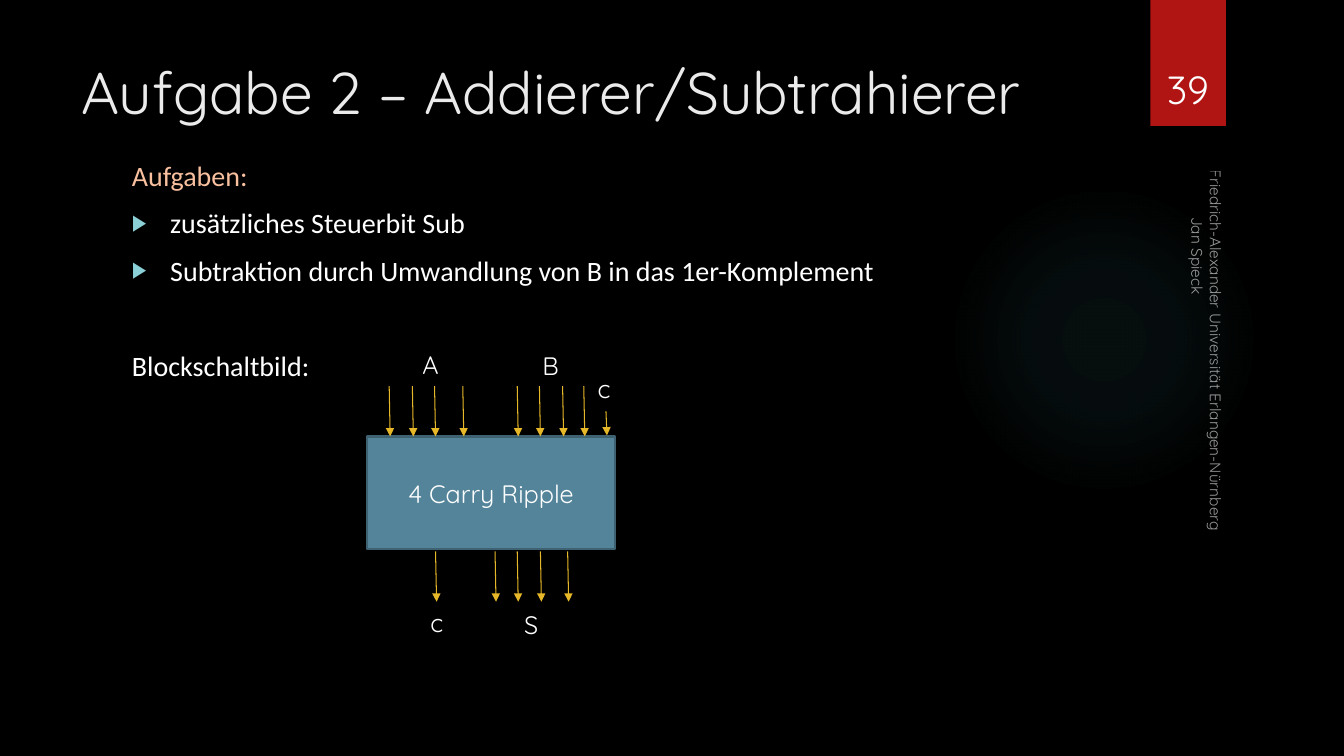
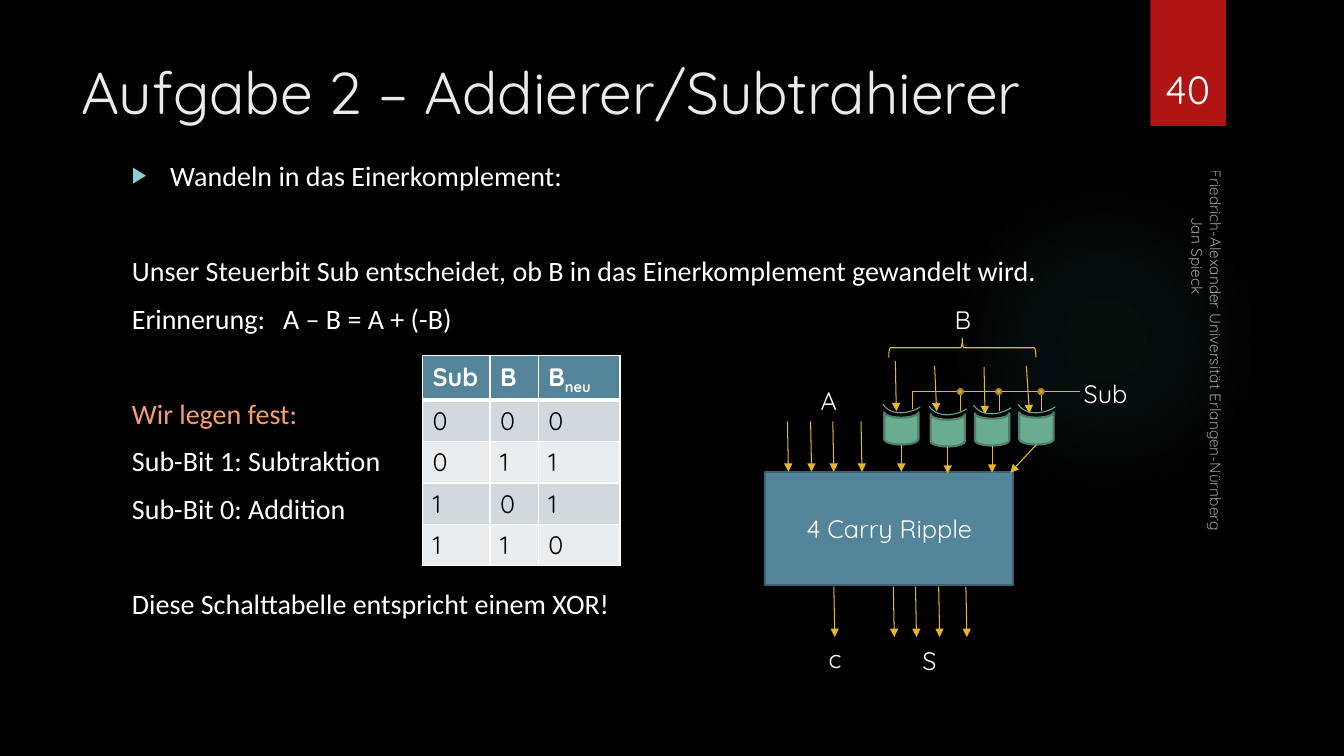
import pptx
import pptx.util
import pptx.dml.color
import pptx.enum.shapes
import pptx.enum.text
import pptx.oxml
import pptx.oxml.ns
from lxml import etree

Inches = pptx.util.Inches
Pt = pptx.util.Pt
SHAPE = pptx.enum.shapes.MSO_SHAPE
ALIGN = pptx.enum.text.PP_ALIGN
ANCHOR = pptx.enum.text.MSO_ANCHOR
qn = pptx.oxml.ns.qn

COLORS = {
    "background": "000000",
    "glow": "50B9C1",
    "band": "B01513",
    "title": "EBEBEB",
    "text": "FFFFFF",
    "bullet": "8AD0D6",
    "task": "F8C09F",
    "rule": "F4A16F",
    "block": "54849A",
    "block_edge": "3E6272",
    "wire": "E6B729",
    "dot_edge": "AA871E",
    "gate": "6AAC90",
    "gate_edge": "4E7F6B",
    "row_odd": "D1D9DE",
    "row_even": "E9EDEF",
    "cell_text": "000000",
}
HEADING_FONT = "Quicksand"
BODY_FONT = "Calibri"
TITLE = "Aufgabe 2 – Addierer/Subtrahierer"
FOOTER = "Friedrich-Alexander Universität Erlangen-Nürnberg\nJan Spieck"


def rgb(name):
    return pptx.dml.color.RGBColor.from_string(COLORS[name])


def add_xml(parent, tag, **attrs):
    return etree.SubElement(parent, qn(tag), attrs)


def style(p, size, color="text", font=HEADING_FONT, bold=False):
    for r in p.runs:
        r.font.size = Pt(size)
        r.font.name = font
        r.font.bold = bold
        r.font.color.rgb = rgb(color)


def add_text(s, text, box, size, color="text", align=ALIGN.LEFT,
             anchor=ANCHOR.TOP, wrap=True):
    sp = s.shapes.add_textbox(*map(Inches, box))
    tf = sp.text_frame
    tf.word_wrap = wrap
    tf.vertical_anchor = anchor
    tf.text = text
    for p in tf.paragraphs:
        p.alignment = align
        style(p, size, color)
    return sp


def add_label(s, text, x, y, width):
    sp = add_text(s, text, (x, y, width, 0.4), 18, wrap=False)
    sp.text_frame.auto_size = pptx.enum.text.MSO_AUTO_SIZE.SHAPE_TO_FIT_TEXT


def add_shape(s, kind, box, fill=None, edge=None, width=1.5, rotation=0):
    sp = s.shapes.add_shape(kind, *map(Inches, box))
    sp.shadow.inherit = False
    sp.rotation = rotation
    if fill:
        sp.fill.solid()
        sp.fill.fore_color.rgb = rgb(fill)
    else:
        sp.fill.background()
    if edge:
        sp.line.color.rgb = rgb(edge)
        sp.line.width = Pt(width)
    else:
        sp.line.fill.background()
    return sp


def add_wire(s, x1, y1, x2, y2, arrow=False):
    c = s.shapes.add_connector(pptx.enum.shapes.MSO_CONNECTOR.STRAIGHT,
                               *map(Inches, (x1, y1, x2, y2)))
    c.line.color.rgb = rgb("wire")
    c.line.width = Pt(0.75)
    if arrow:
        add_xml(c.line._get_or_add_ln(), "a:tailEnd", type="triangle")
    add_xml(c._element.spPr, "a:effectLst")


def add_arrows(s, xs, y):
    for x in xs:
        add_wire(s, x, y, x + 0.01, y + 0.5, arrow=True)


def add_glow(s):
    sp = add_shape(s, SHAPE.OVAL, (9.41, 1.83, 3.08, 3.08))
    stops = "".join(
        f'<a:gs pos="{pos * 1000}"><a:srgbClr val="{COLORS["glow"]}">'
        f'<a:alpha val="{alpha * 1000}"/></a:srgbClr></a:gs>'
        for pos, alpha in ((0, 7), (36, 6), (69, 0)))
    grad = pptx.oxml.parse_xml(
        f'<a:gradFill {pptx.oxml.ns.nsdecls("a")}><a:gsLst>{stops}</a:gsLst>'
        '<a:path path="circle"><a:fillToRect l="50000" t="50000" r="50000" '
        'b="50000"/></a:path></a:gradFill>')
    spPr = sp._element.spPr
    spPr.replace(spPr.find(qn("a:noFill")), grad)


def add_footer(s):
    sp = add_text(s, FOOTER, (9.79, 3.53, 4.22, 0.33), 11, anchor=ANCHOR.BOTTOM)
    sp.rotation = 90
    for p in sp.text_frame.paragraphs:
        for color in p._p.iter(qn("a:srgbClr")):
            add_xml(color, "a:alpha", val="60000")
    p._p.get_or_add_pPr().set("marL", str(Inches(0.47)))


def new_slide(prs, number):
    s = prs.slides.add_slide(prs.slide_layouts[6])
    add_glow(s)
    add_shape(s, SHAPE.RECTANGLE, (11.41, 0, 0.75, 1.25), "band")
    add_text(s, TITLE, (0.71, 0.5, 10.29, 1.53), 42, "title")
    add_footer(s)
    add_text(s, str(number), (11.32, 0.32, 0.92, 0.84), 28,
             align=ALIGN.CENTER, anchor=ANCHOR.BOTTOM)
    return s


def make_bullet(p):
    pPr = p._p.get_or_add_pPr()
    pPr.set("marL", str(Inches(0.38)))
    pPr.set("indent", str(-Inches(0.38)))
    add_xml(add_xml(pPr, "a:buClr"), "a:srgbClr", val=COLORS["bullet"])
    add_xml(pPr, "a:buSzPct", val="80000")
    add_xml(pPr, "a:buFont", typeface="Arial")
    add_xml(pPr, "a:buChar", char="▶")


def add_body(s, lines):
    sp = s.shapes.add_textbox(*map(Inches, (1.21, 1.52, 9.78, 5.62)))
    tf = sp.text_frame
    tf.word_wrap = True
    tf.text = "\n".join(text for text, _, _, _ in lines)
    for i, (p, (text, color, bullet, gap)) in enumerate(zip(tf.paragraphs, lines)):
        if i:
            p.space_before = Pt(44 if gap else 10)
        if bullet:
            make_bullet(p)
        if "\t" in text:
            tabs = add_xml(p._p.get_or_add_pPr(), "a:tabLst")
            add_xml(tabs, "a:tab", pos=str(Inches(1.5)), algn="l")
        style(p, 20, color, BODY_FONT)


def line(text, color="text", bullet=False, gap=False):
    return text, color, bullet, gap


def add_adder(s, x, y):
    sp = add_shape(s, SHAPE.RECTANGLE, (x, y, 2.46, 1.12), "block", "block_edge")
    tf = sp.text_frame
    tf.text = "4 Carry Ripple"
    tf.vertical_anchor = ANCHOR.MIDDLE
    tf.paragraphs[0].alignment = ALIGN.CENTER
    style(tf.paragraphs[0], 18)
    add_arrows(s, [x + dx for dx in (0.22, 0.45, 0.67, 0.95)], y - 0.5)
    add_arrows(s, [x + dx for dx in (0.68, 1.27, 1.49, 1.72, 1.99)], y + 1.14)
    add_label(s, "A", x + 0.45, y - 0.91, 0.39)
    add_label(s, "S", x + 1.46, y + 1.67, 0.33)
    add_label(s, "c", x + 0.53, y + 1.65, 0.36)


def set_borders(cell, top, bottom):
    tcPr = cell._tc.get_or_add_tcPr()
    for side, width in (("L", 1), ("R", 1), ("T", top), ("B", bottom)):
        ln = add_xml(tcPr, f"a:ln{side}", w=str(Pt(width)))
        add_xml(add_xml(ln, "a:solidFill"), "a:srgbClr", val=COLORS["text"])


def add_truth_table(s):
    rows = ["Sub", "B", "B"], "000", "011", "101", "110"
    widths = 0.67, 0.48, 0.81
    table = s.shapes.add_table(len(rows), len(widths),
                               *map(Inches, (4.19, 3.53, 1.96, 2.03))).table
    for column, width in zip(table.columns, widths):
        column.width = Inches(width)
    for i, row in enumerate(rows):
        table.rows[i].height = Inches(0.41)
        for j, value in enumerate(row):
            cell = table.cell(i, j)
            set_borders(cell, 3 if i == 1 else 1, 1 if i else 3)
            cell.fill.solid()
            fill = ("row_odd" if i % 2 else "row_even") if i else "block"
            cell.fill.fore_color.rgb = rgb(fill)
            cell.text_frame.text = value
            style(cell.text_frame.paragraphs[0], 18,
                  "cell_text" if i else "text", bold=not i)
    p = table.cell(0, 2).text_frame.paragraphs[0]
    r = p.add_run()
    r.text = "neu"
    style(p, 18, bold=True)
    r._r.get_or_add_rPr().set("baseline", "-25000")


def add_xor_gates(s):
    gates = (8.78, 4.08), (9.24, 4.1), (9.68, 4.09), (10.12, 4.08)
    inputs = ((8.88, 3.58, 8.89, 4.08), (9.27, 3.63, 9.29, 4.08),
              (9.76, 3.64, 9.77, 4.11), (10.18, 3.63, 10.21, 4.1))
    for ends in inputs:
        add_wire(s, *ends, arrow=True)
    for x, y in gates:
        add_shape(s, SHAPE.FLOWCHART_STORED_DATA, (x, y, 0.32, 0.34),
                  "gate", "gate_edge", rotation=270)
    add_wire(s, 9.05, 3.88, 10.71, 3.88)
    add_wire(s, 9.05, 4.06, 9.05, 3.88)
    for x in (9.53, 9.91, 10.33):
        add_wire(s, x, 4.08, x, 3.88)
        add_shape(s, SHAPE.OVAL, (x - 0.03, 3.86, 0.05, 0.05), "wire", "dot_edge")
    add_shape(s, SHAPE.RIGHT_BRACE, (9.45, 2.72, 0.19, 1.46),
              edge="wire", width=0.75, rotation=270)
    for x, y in gates[:3]:
        add_wire(s, x + 0.16, y + 0.33, x + 0.16, y + 0.6, arrow=True)
    add_wire(s, 10.28, 4.41, 10.02, 4.69, arrow=True)
    for x, y in gates:
        add_shape(s, SHAPE.ARC, (x - 0.07, y - 0.45, 0.6, 0.44),
                  edge="gate", width=0.75, rotation=147.8)
    add_label(s, "B", 9.37, 2.97, 0.35)
    add_label(s, "Sub", 10.65, 3.7, 0.65)


def build_task_slide(prs):
    s = new_slide(prs, 39)
    add_body(s, [
        line("Aufgaben:", "task"),
        line("zusätzliches Steuerbit Sub", bullet=True),
        line("Subtraktion durch Umwandlung von B in das 1er-Komplement", bullet=True),
        line("Blockschaltbild:", gap=True),
    ])
    add_adder(s, 3.64, 4.33)
    add_arrows(s, (5.13, 5.35, 5.58, 5.79), 3.83)
    add_wire(s, 6.01, 4.08, 6.02, 4.32, arrow=True)
    add_label(s, "B", 5.28, 3.43, 0.35)
    add_label(s, "c", 5.83, 3.65, 0.36)


def build_complement_slide(prs):
    s = new_slide(prs, 40)
    add_body(s, [
        line("Wandeln in das Einerkomplement:", bullet=True),
        line("Unser Steuerbit Sub entscheidet, ob B in das Einerkomplement "
             "gewandelt wird.", gap=True),
        line("Erinnerung:\tA – B = A + (-B)"),
        line("Wir legen fest:", "rule", gap=True),
        line("Sub-Bit 1: Subtraktion"),
        line("Sub-Bit 0: Addition"),
        line("Diese Schalttabelle entspricht einem XOR!", gap=True),
    ])
    add_adder(s, 7.59, 4.68)
    add_truth_table(s)
    add_xor_gates(s)


def main():
    prs = pptx.Presentation()
    prs.slide_width = Inches(13.33)
    prs.slide_height = Inches(7.5)
    fill = prs.slide_master.background.fill
    fill.solid()
    fill.fore_color.rgb = rgb("background")
    build_task_slide(prs)
    build_complement_slide(prs)
    prs.save("out.pptx")


if __name__ == "__main__":
    main()
